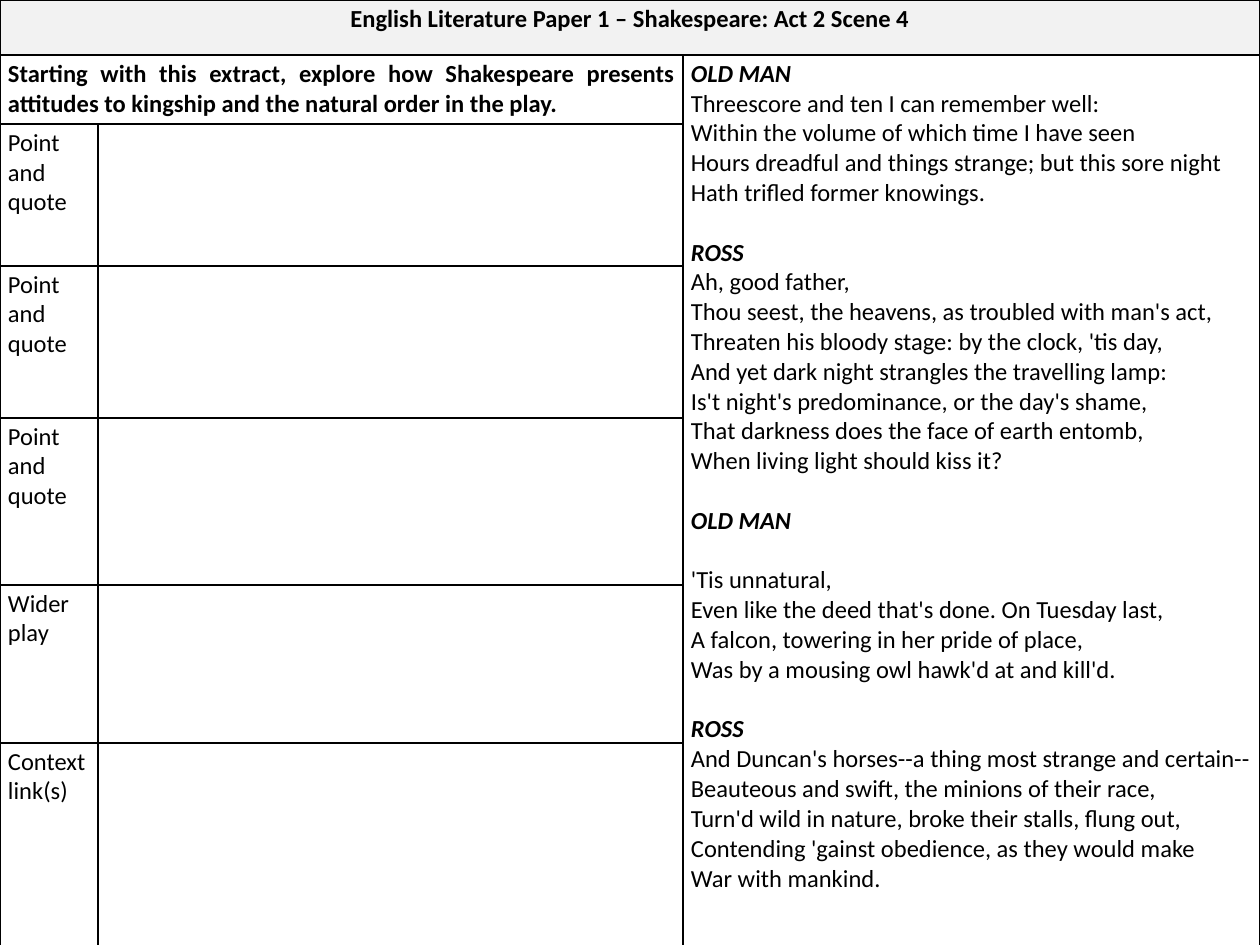
from lxml import etree
from pptx import Presentation
from pptx import util as u
from pptx.dml.color import RGBColor
from pptx.enum import text
from pptx.oxml.ns import qn

PX = u.Inches(1) / 126
FONT = {"name": "Calibri", "size": u.Pt(14)}
BLACK, GREY = "000000", "F2F2F2"
LINE_GAP = u.Pt(17)
COLUMNS = [98, 585, 577]
ROWS = [55, 69, 142, 152, 167, 158, 209]
MARGINS = {"margin_left": 8, "margin_right": 8, "margin_top": 4, "margin_bottom": 4}

TITLE = "English Literature Paper 1 – Shakespeare: Act 2 Scene 4"
QUESTION = ("Starting with this extract, explore how Shakespeare presents "
            "attitudes to kingship and the natural order in the play.")
PROMPTS = ["Point and quote"] * 3 + ["Wider play", "Context link(s)"]

# speaker, blank line after the name, lines
SPEECHES = [
    ("OLD MAN", False, [
        "Threescore and ten I can remember well:",
        "Within the volume of which time I have seen",
        "Hours dreadful and things strange; but this sore night",
        "Hath trifled former knowings."]),
    ("ROSS", False, [
        "Ah, good father,",
        "Thou seest, the heavens, as troubled with man's act,",
        "Threaten his bloody stage: by the clock, 'tis day,",
        "And yet dark night strangles the travelling lamp:",
        "Is't night's predominance, or the day's shame,",
        "That darkness does the face of earth entomb,",
        "When living light should kiss it?"]),
    ("OLD MAN", True, [
        "'Tis unnatural,",
        "Even like the deed that's done. On Tuesday last,",
        "A falcon, towering in her pride of place,",
        "Was by a mousing owl hawk'd at and kill'd."]),
    ("ROSS", False, [
        "And Duncan's horses--a thing most strange and certain--",
        "Beauteous and swift, the minions of their race,",
        "Turn'd wild in nature, broke their stalls, flung out,",
        "Contending 'gainst obedience, as they would make",
        "War with mankind."]),
]


def px(length):
    return u.Emu(round(length * PX))


def color(value):
    return RGBColor.from_string(value)


def add_borders(cell):
    properties = cell._tc.get_or_add_tcPr()
    for side in ("lnL", "lnR", "lnT", "lnB"):
        line = etree.SubElement(properties, qn(f"a:{side}"), w=str(u.Pt(1)))
        fill = etree.SubElement(line, qn("a:solidFill"))
        etree.SubElement(fill, qn("a:srgbClr"), val=BLACK)


def write(cell, lines):
    """Write (words, font format, paragraph format) lines into a cell."""
    frame = cell.text_frame
    for index, (words, font, layout) in enumerate(lines):
        para = frame.add_paragraph() if index else frame.paragraphs[0]
        for name, value in layout.items():
            setattr(para, name, value)
        span = para.add_run()
        span.text = words
        for name, value in {**FONT, **font}.items():
            setattr(span.font, name, value)
        span.font.color.rgb = color(BLACK)


def extract_lines():
    lines = []
    for number, (speaker, gap_after, verses) in enumerate(SPEECHES):
        before = {"space_before": LINE_GAP} if number else {}
        lines.append((speaker, {"bold": True, "italic": True}, before))
        for index, verse in enumerate(verses):
            gap = gap_after and index == 0
            lines.append((verse, {}, {"space_before": LINE_GAP} if gap else {}))
    return lines


def main():
    deck = Presentation()
    deck.slide_width, deck.slide_height = u.Inches(10), u.Inches(7.5)
    page = deck.slides.add_slide(deck.slide_layouts[6])
    table = page.shapes.add_table(len(ROWS), len(COLUMNS), 0, 0,
                                  px(sum(COLUMNS)), px(sum(ROWS))).table
    table.first_row = table.horz_banding = False
    for column, width in zip(table.columns, COLUMNS):
        column.width = px(width)
    for row, height in zip(table.rows, ROWS):
        row.height = px(height)

    for cell in table.iter_cells():
        add_borders(cell)
        cell.fill.background()
        for name, value in MARGINS.items():
            setattr(cell, name, px(value))

    title, question, extract = table.cell(0, 0), table.cell(1, 0), table.cell(1, 2)
    title.merge(table.cell(0, 2))
    question.merge(table.cell(1, 1))
    extract.merge(table.cell(len(ROWS) - 1, 2))
    title.fill.solid()
    title.fill.fore_color.rgb = color(GREY)

    align = text.PP_ALIGN
    write(title, [(TITLE, {"bold": True}, {"alignment": align.CENTER})])
    write(question, [(QUESTION, {"bold": True}, {"alignment": align.JUSTIFY})])
    write(extract, extract_lines())
    for row, prompt in enumerate(PROMPTS, start=2):
        write(table.cell(row, 0), [(prompt, {}, {})])
    deck.save("out.pptx")


if __name__ == "__main__":
    main()
